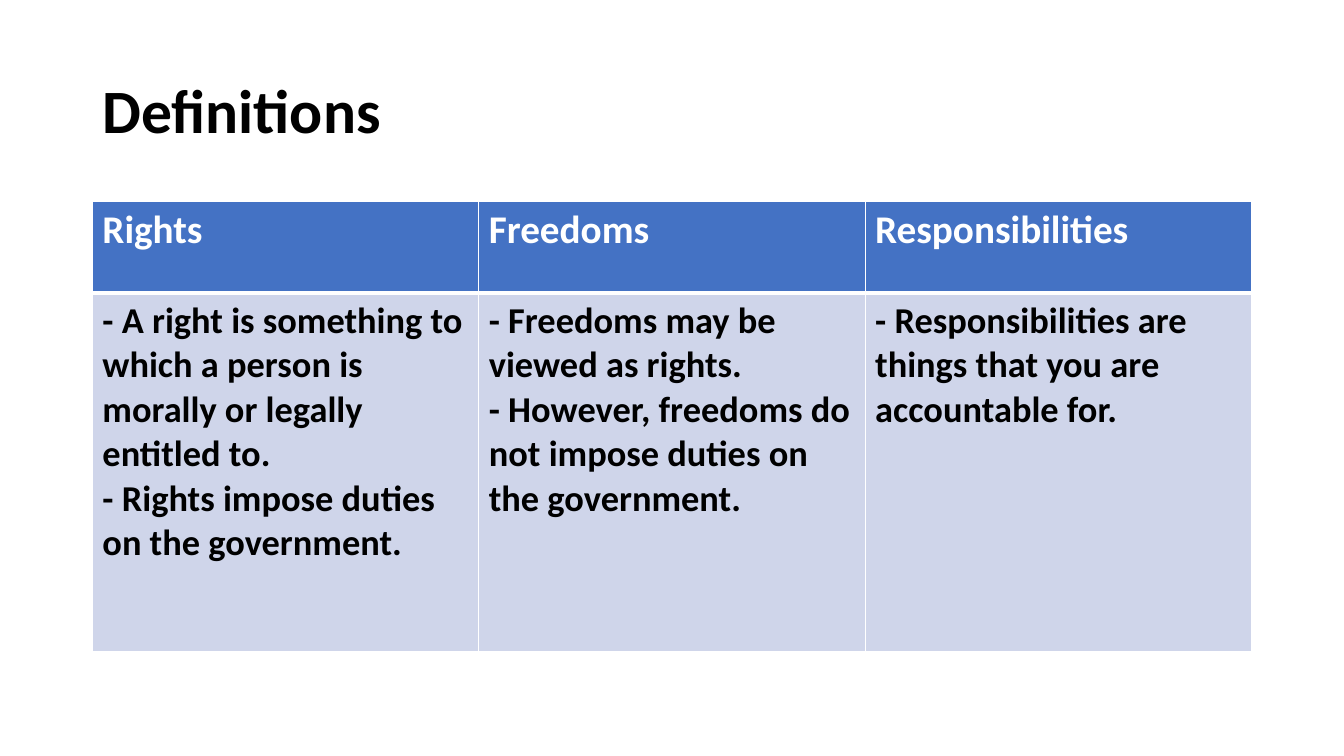
from dataclasses import dataclass

from lxml.etree import SubElement
from pptx import Presentation
from pptx.dml.color import RGBColor
from pptx.enum.text import MSO_ANCHOR
from pptx.oxml.ns import qn
from pptx.slide import Slide
from pptx.table import _Cell as Cell
from pptx.text.text import TextFrame
from pptx.util import Pt

LEFT, WIDTH = 66, 828
TITLE_TOP, TITLE_HEIGHT = 28.75, 104.4
TABLE_TOP, HEADER_HEIGHT, BODY_HEIGHT = 144, 65.5, 255.6
THIN, THICK = 1, 3
WHITE, BLACK, BLUE, PALE_BLUE = "FFFFFF", "000000", "4472C4", "CFD5EA"


@dataclass(frozen=True)
class Definition:
    term: str
    points: tuple[str, ...]


@dataclass(frozen=True)
class RowStyle:
    size: float
    ink: str
    fill: str
    top_line: float
    bottom_line: float


HEADER = RowStyle(28, WHITE, BLUE, THIN, THICK)
BODY = RowStyle(26, BLACK, PALE_BLUE, THICK, THIN)

DEFINITIONS = (
    Definition("Rights", (
        "- A right is something to which a person is morally or legally entitled to.",
        "- Rights impose duties on the government.",
    )),
    Definition("Freedoms", (
        "- Freedoms may be viewed as rights.",
        "- However, freedoms do not impose duties on the government.",
    )),
    Definition("Responsibilities", (
        "- Responsibilities are things that you are accountable for.",
    )),
)


def color(hex_code: str) -> RGBColor:
    return RGBColor.from_string(hex_code)


def write_bold(frame: TextFrame, text: str, size: float, ink: str) -> None:
    frame.text = text
    for paragraph in frame.paragraphs:
        for run in paragraph.runs:
            run.font.name = "Calibri"
            run.font.size = Pt(size)
            run.font.bold = True
            run.font.color.rgb = color(ink)


def add_borders(cell: Cell, top: float, bottom: float) -> None:
    properties = cell._tc.get_or_add_tcPr()
    for side, width in (("L", THIN), ("R", THIN), ("T", top), ("B", bottom)):
        line = SubElement(properties, qn(f"a:ln{side}"), w=str(Pt(width)))
        SubElement(SubElement(line, qn("a:solidFill")), qn("a:srgbClr"), val=WHITE)


def fill_cell(cell: Cell, text: str, style: RowStyle) -> None:
    write_bold(cell.text_frame, text, style.size, style.ink)
    add_borders(cell, style.top_line, style.bottom_line)
    cell.fill.solid()
    cell.fill.fore_color.rgb = color(style.fill)


def add_title(slide: Slide, text: str) -> None:
    frame = slide.shapes.add_textbox(
        Pt(LEFT), Pt(TITLE_TOP), Pt(WIDTH), Pt(TITLE_HEIGHT)).text_frame
    frame.word_wrap = True
    frame.vertical_anchor = MSO_ANCHOR.MIDDLE
    write_bold(frame, text, 44, BLACK)
    frame.paragraphs[0].line_spacing = 0.9


def add_definitions(slide: Slide, definitions: tuple[Definition, ...]) -> None:
    table = slide.shapes.add_table(
        2, len(definitions), Pt(LEFT), Pt(TABLE_TOP),
        Pt(WIDTH), Pt(HEADER_HEIGHT + BODY_HEIGHT)).table
    table.rows[0].height = Pt(HEADER_HEIGHT)
    table.rows[1].height = Pt(BODY_HEIGHT)
    for column, definition in enumerate(definitions):
        fill_cell(table.cell(0, column), definition.term, HEADER)
        fill_cell(table.cell(1, column), "\n".join(definition.points), BODY)


def main() -> None:
    deck = Presentation()
    deck.slide_width, deck.slide_height = Pt(960), Pt(540)
    slide = deck.slides.add_slide(deck.slide_layouts[6])
    add_title(slide, "Definitions")
    add_definitions(slide, DEFINITIONS)
    deck.save("out.pptx")


if __name__ == "__main__":
    main()
